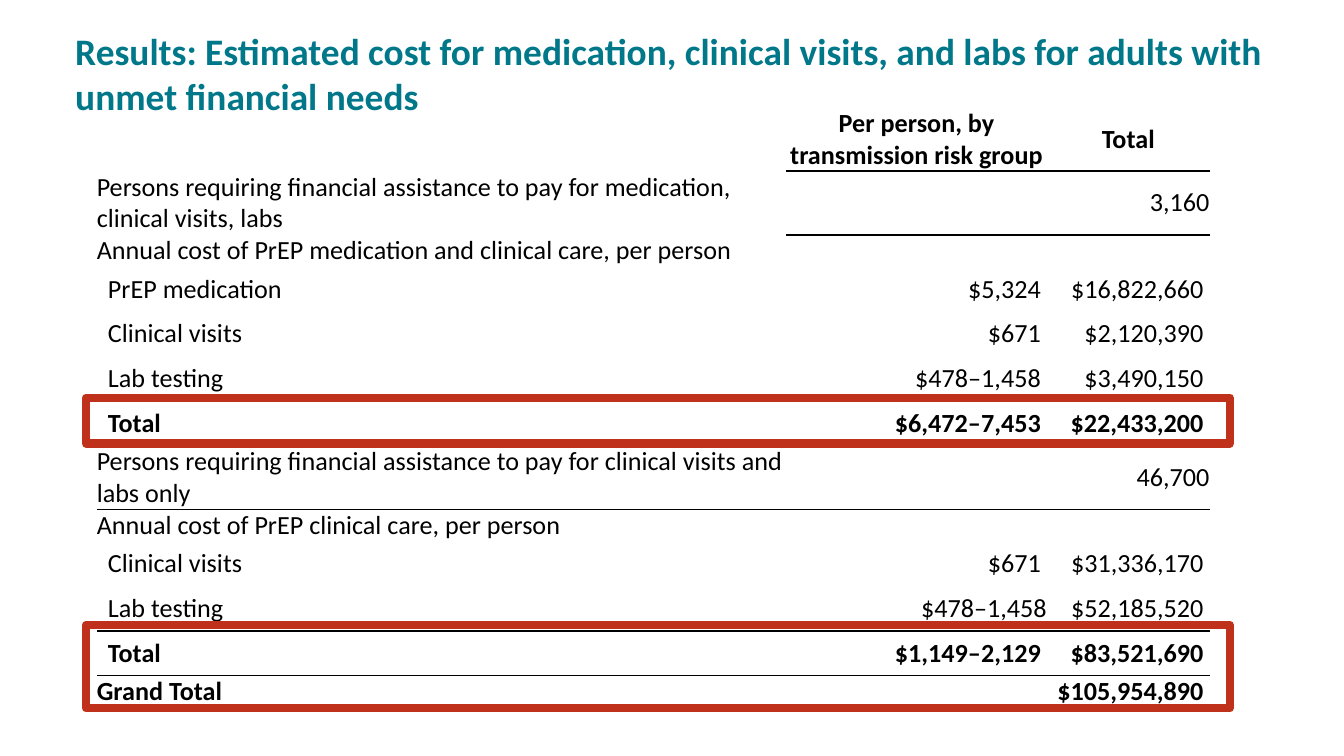
"""Build the slide on estimated costs for adults with unmet financial needs."""
from pptx import Presentation
from pptx.dml.color import RGBColor
from pptx.enum.shapes import MSO_SHAPE
from pptx.enum.text import MSO_ANCHOR, MSO_AUTO_SIZE, PP_ALIGN
from pptx.oxml import parse_xml
from pptx.oxml.ns import nsdecls
from pptx.util import Pt

LEFT, MID, RIGHT = PP_ALIGN.LEFT, PP_ALIGN.CENTER, PP_ALIGN.RIGHT
TOP, CENTER = MSO_ANCHOR.TOP, MSO_ANCHOR.MIDDLE
FIXED, RECT = MSO_AUTO_SIZE.NONE, MSO_SHAPE.RECTANGLE
FACE, SIZE = "Calibri", 14
PLAIN = "{2D5ABB26-0587-4C30-8999-92F81FD0307C}"


def paint(form, tone):
    form.rgb = RGBColor.from_string(tone)


def write(para, text, size, tone, bold):
    run = para.add_run()
    run.text = text
    run.font.name, run.font.size, run.font.bold = FACE, Pt(size), bold
    paint(run.font.color, tone)


deck = Presentation()
deck.slide_width, deck.slide_height = Pt(720), Pt(405)
slide = deck.slides.add_slide(deck.slide_layouts[5])

title = slide.shapes.title
title.left, title.top, title.width, title.height = Pt(33.12), Pt(11.52), Pt(653.76), Pt(43.2)
frame = title.text_frame
frame.auto_size, frame.vertical_anchor, frame.word_wrap = FIXED, TOP, True
frame.paragraphs[0].alignment = LEFT
write(frame.paragraphs[0], "Results: Estimated cost for medication, clinical visits, and labs "
      "for adults with unmet financial needs", 20, "00788A", True)

TALL, LOW, STEP = 27.36, 13.68, 24
rows = [
    (TALL, "", "Per person, by transmission risk group", "Total"),
    (TALL, "Persons requiring financial assistance to pay for medication, clinical visits, labs",
     "", "3,160"),
    (LOW, "Annual cost of PrEP medication and clinical care, per person", "", ""),
    (STEP, "PrEP medication", " $5,324 ", " $16,822,660 "),
    (STEP, "Clinical visits", " $671 ", " $2,120,390 "),
    (STEP, "Lab testing", " $478–1,458 ", " $3,490,150 "),
    (STEP, "Total", " $6,472–7,453 ", " $22,433,200 "),
    (TALL, "Persons requiring financial assistance to pay for clinical visits and labs only",
     "", "46,700"),
    (LOW, "Annual cost of PrEP clinical care, per person", "", ""),
    (STEP, "Clinical visits", " $671 ", " $31,336,170 "),
    (STEP, "Lab testing", " $478–1,458", " $52,185,520 "),
    (STEP, "Total", " $1,149–2,129 ", " $83,521,690 "),
    (LOW, "Grand Total", "", " $105,954,890 "),
]
bold_rows = {0, 6, 11, 12}
ruled = {0, 5, 6, 10, 11, 12}

holder = slide.shapes.add_table(len(rows), 3, Pt(51.84), Pt(57.6), Pt(596.16),
                                Pt(sum(row[0] for row in rows)))
table = holder.table
table.first_row = table.horz_banding = False
table._tbl.tblPr.find("{*}tableStyleId").text = PLAIN
for col, width in zip(table.columns, (369.36, 139.68, 87.12)):
    col.width = Pt(width)

for i, (height, *texts) in enumerate(rows):
    table.rows[i].height = Pt(height)
    for j, text in enumerate(texts):
        cell = table.cell(i, j)
        cell.vertical_anchor = CENTER
        cell.margin_left = cell.margin_right = cell.margin_top = cell.margin_bottom = 0
        if j == 0 and height == STEP:
            cell.margin_left = Pt(6)
        props = cell._tc.get_or_add_tcPr()
        for side, edge in (("T", i - 1), ("B", i)):
            if edge in ruled and (edge or j):
                props.append(parse_xml(
                    f'<a:ln{side} {nsdecls("a")} w="{Pt(1)}"><a:solidFill>'
                    f'<a:srgbClr val="000000"/></a:solidFill></a:ln{side}>'))
        cell.fill.background()
        para = cell.text_frame.paragraphs[0]
        para.alignment = LEFT if j == 0 else RIGHT if i else MID
        if text:
            write(para, text, SIZE, "000000", i in bold_rows)
        else:
            para._p.append(parse_xml(f'<a:endParaRPr {nsdecls("a")} sz="{SIZE * 100}"/>'))

for top, height in ((213.12, 24.48), (334.8, 44.64)):
    box = slide.shapes.add_shape(RECT, Pt(46.08), Pt(top), Pt(612.72), Pt(height))
    box.shadow.inherit = False
    box.fill.background()
    box.line.width = Pt(4.5)
    paint(box.line.color, "BF311A")

deck.save("out.pptx")
